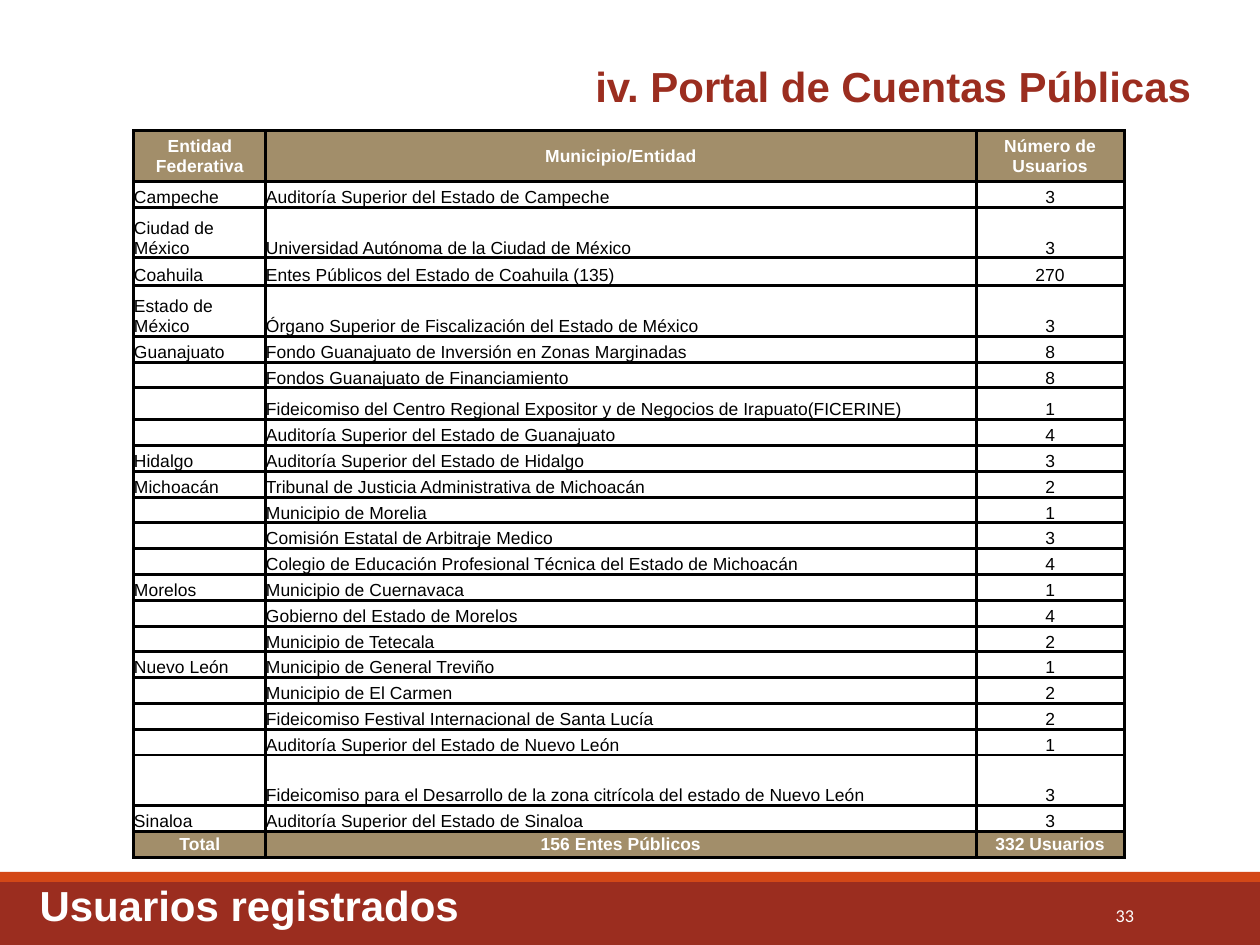
from lxml.etree import SubElement
from pptx import Presentation
from pptx.dml.color import RGBColor
from pptx.enum.shapes import MSO_SHAPE
from pptx.enum.text import MSO_ANCHOR, PP_ALIGN
from pptx.oxml import parse_xml
from pptx.oxml.ns import nsdecls, qn
from pptx.util import Cm, Pt

RED, ORANGE, TAN = "9B2D1F", "D34817", "A28E6A"
WHITE, BLACK = "FFFFFF", "000000"


def color(value):
    return RGBColor.from_string(value)


def write(frame, text, size=5, font="Arial", ink=BLACK, bold=False,
          align=PP_ALIGN.LEFT, anchor=MSO_ANCHOR.TOP):
    frame.word_wrap = True
    frame.vertical_anchor = anchor
    para = frame.paragraphs[0]
    para.alignment = align
    if not text:
        # Keeps an empty cell as low as a filled one
        SubElement(para._p, qn("a:endParaRPr"), sz=str(size * 100))
        return
    span = para.add_run()
    span.text = text
    span.font.size = Pt(size)
    span.font.name = font
    span.font.bold = bold
    span.font.color.rgb = color(ink)


deck = Presentation()
deck.slide_width, deck.slide_height = Cm(12.7), Cm(9.525)
page = deck.slides.add_slide(deck.slide_layouts[5])

# Footer bands
for top, height, fill in [(8.89, 0.64, RED), (8.79, 0.1, ORANGE)]:
    band = page.shapes.add_shape(MSO_SHAPE.RECTANGLE, 0, Cm(top), deck.slide_width, Cm(height))
    band.shadow.inherit = False
    band.fill.solid()
    band.fill.fore_color.rgb = color(fill)
    band.line.fill.background()

# Title
title = page.shapes.title
title.left, title.top, title.width, title.height = Cm(1.47), Cm(0.48), Cm(10.8), Cm(0.76)
write(title.text_frame, "iv. Portal de Cuentas Públicas", size=12, ink=RED, bold=True,
      align=PP_ALIGN.RIGHT)

# Footer caption and page number
caption = page.shapes.add_textbox(Cm(0.15), Cm(8.74), Cm(9.63), Cm(0.76))
write(caption.text_frame, "Usuarios registrados", size=12, ink=WHITE, bold=True)
number = page.shapes.add_textbox(Cm(10.31), Cm(8.97), Cm(1.37), Cm(0.51))
write(number.text_frame, "33", size=5.2, font="Calibri", ink=WHITE,
      align=PP_ALIGN.RIGHT, anchor=MSO_ANCHOR.MIDDLE)

# Table of registered users
rows = [
    ("Entidad Federativa", "Municipio/Entidad", "Número de Usuarios"),
    ("Campeche", "Auditoría Superior del Estado de Campeche", "3"),
    ("Ciudad de México", "Universidad Autónoma de la Ciudad de México", "3"),
    ("Coahuila", "Entes Públicos del Estado de Coahuila (135)", "270"),
    ("Estado de México", "Órgano Superior de Fiscalización del Estado de México", "3"),
    ("Guanajuato", "Fondo Guanajuato de Inversión en Zonas Marginadas", "8"),
    ("", "Fondos Guanajuato de Financiamiento", "8"),
    ("", "Fideicomiso del Centro Regional Expositor y de Negocios de Irapuato(FICERINE)", "1"),
    ("", "Auditoría Superior del Estado de Guanajuato", "4"),
    ("Hidalgo", "Auditoría Superior del Estado de Hidalgo", "3"),
    ("Michoacán", "Tribunal de Justicia Administrativa de Michoacán", "2"),
    ("", "Municipio de Morelia", "1"),
    ("", "Comisión Estatal de Arbitraje Medico", "3"),
    ("", "Colegio de Educación Profesional Técnica del Estado de Michoacán", "4"),
    ("Morelos", "Municipio de Cuernavaca", "1"),
    ("", "Gobierno del Estado de Morelos", "4"),
    ("", "Municipio de Tetecala", "2"),
    ("Nuevo León", "Municipio de General Treviño", "1"),
    ("", "Municipio de El Carmen", "2"),
    ("", "Fideicomiso Festival Internacional de Santa Lucía", "2"),
    ("", "Auditoría Superior del Estado de Nuevo León", "1"),
    ("", "Fideicomiso para el Desarrollo de la zona citrícola del estado de Nuevo León", "3"),
    ("Sinaloa", "Auditoría Superior del Estado de Sinaloa", "3"),
    ("Total", "156 Entes Públicos", "332 Usuarios"),
]
column_widths = [1.33, 7.16, 1.49]
tall_rows = {0: 0.51, 2: 0.51, 3: 0.28, 4: 0.51, 7: 0.32, 21: 0.51}
row_heights = [tall_rows.get(index, 0.26) for index in range(len(rows))]
body_aligns = [PP_ALIGN.LEFT, PP_ALIGN.JUSTIFY, PP_ALIGN.CENTER]

table = page.shapes.add_table(len(rows), 3, Cm(1.35), Cm(1.32),
                              Cm(sum(column_widths)), Cm(sum(row_heights))).table
table.first_row = table.horz_banding = False
for column, width in zip(table.columns, column_widths):
    column.width = Cm(width)

for row_index, texts in enumerate(rows):
    table.rows[row_index].height = Cm(row_heights[row_index])
    strong = row_index in (0, len(rows) - 1)
    for column_index, text in enumerate(texts):
        cell = table.cell(row_index, column_index)
        cell.margin_left = cell.margin_right = cell.margin_top = cell.margin_bottom = 0
        write(cell.text_frame, text, bold=strong, ink=WHITE if strong else BLACK,
              align=PP_ALIGN.CENTER if strong else body_aligns[column_index])
        cell.vertical_anchor = MSO_ANCHOR.MIDDLE if strong else MSO_ANCHOR.BOTTOM
        cell.fill.solid()
        cell.fill.fore_color.rgb = color(TAN if strong else WHITE)
        # Black borders on all four sides, placed ahead of the fill
        for order, side in enumerate("LRTB"):
            border = parse_xml(
                f'<a:ln{side} {nsdecls("a")} w="{Pt(1)}"><a:solidFill>'
                f'<a:srgbClr val="{BLACK}"/></a:solidFill></a:ln{side}>')
            cell._tc.get_or_add_tcPr().insert(order, border)

deck.save("out.pptx")
